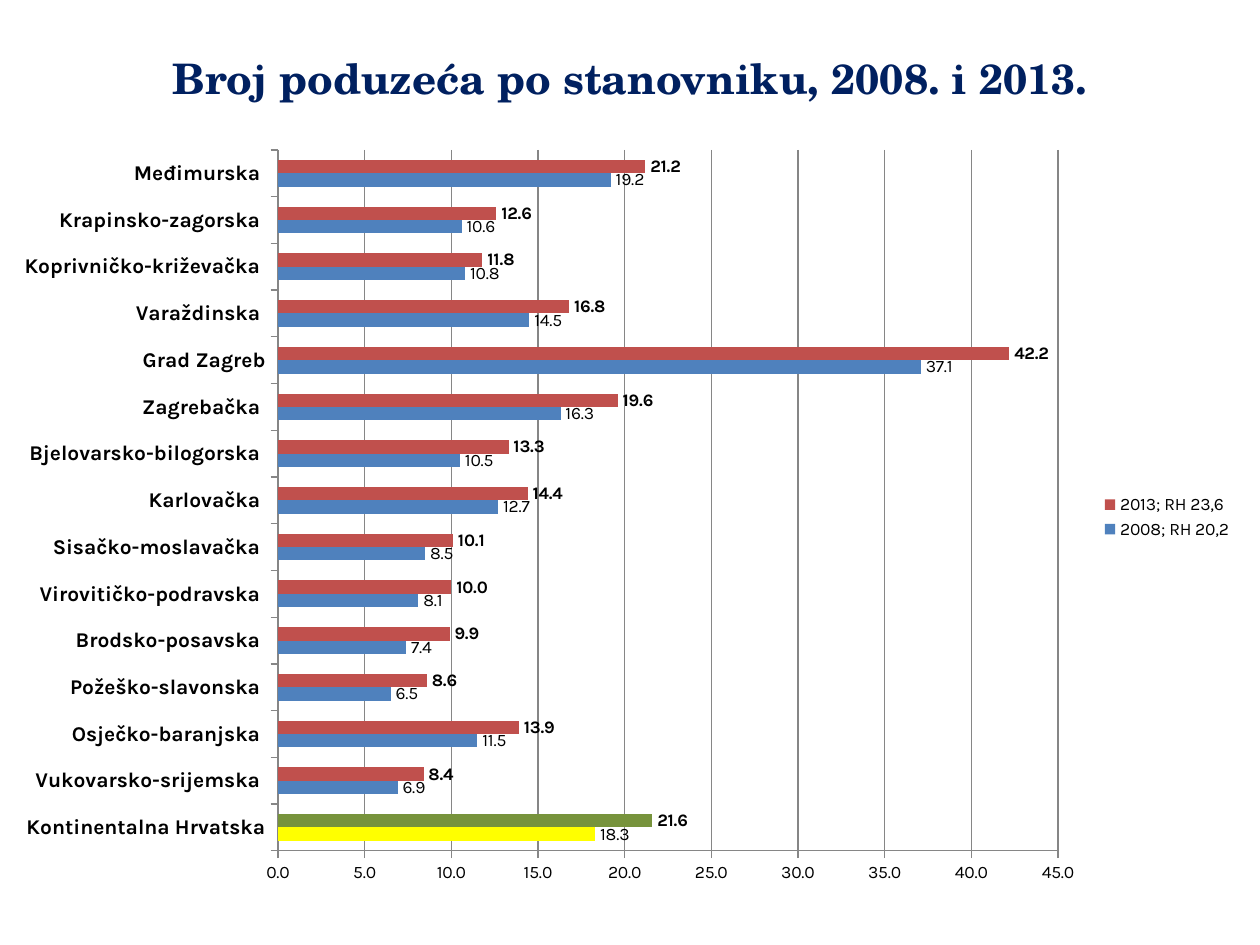
from dataclasses import dataclass

from lxml.etree import SubElement
from pptx import Presentation
from pptx.chart.data import CategoryChartData
from pptx.dml.color import RGBColor
from pptx.enum.chart import XL_CHART_TYPE as ChartType
from pptx.enum.chart import XL_LABEL_POSITION as LabelPosition
from pptx.enum.chart import XL_LEGEND_POSITION as LegendPosition
from pptx.enum.chart import XL_TICK_MARK as TickMark
from pptx.enum.text import MSO_ANCHOR as Anchor
from pptx.enum.text import PP_ALIGN as Align
from pptx.oxml.ns import qn
from pptx.util import Emu, Pt

EMU_PER_PX = 914400 / 126
COLORS = {
    "background": "FFFFFF",
    "title": "002060",
    "text": "000000",
    "axis": "868686",
    "blue": "4F81BD",
    "red": "C0504D",
    "yellow": "FFFF00",
    "green": "77933C",
}
TITLE_FONT = "TeX Gyre Schola"
CHART_FONT = "Karla"
COUNTIES = [
    "Kontinentalna Hrvatska", "Vukovarsko-srijemska ", "Osječko-baranjska ",
    "Požeško-slavonska ", "Brodsko-posavska ", "Virovitičko-podravska ",
    "Sisačko-moslavačka ", "Karlovačka ", "Bjelovarsko-bilogorska ",
    "Zagrebačka ", "Grad Zagreb", "Varaždinska ", "Koprivničko-križevačka ",
    "Krapinsko-zagorska ", "Međimurska ",
]


@dataclass(frozen=True)
class Box:
    left: int
    top: int
    width: int
    height: int

    def emu(self) -> list[Emu]:
        lengths = (self.left, self.top, self.width, self.height)
        return [px(length) for length in lengths]


@dataclass(frozen=True)
class YearSeries:
    name: str
    values: tuple[float, ...]
    color: str
    total_color: str
    bold_labels: bool


YEARS = [
    YearSeries(
        "2008; RH 20,2",
        (18.3, 6.9, 11.5, 6.5, 7.4, 8.1, 8.5, 12.7, 10.5, 16.3, 37.1, 14.5, 10.8, 10.6, 19.2),
        "blue", "yellow", False,
    ),
    YearSeries(
        "2013; RH 23,6",
        (21.6, 8.4, 13.9, 8.6, 9.9, 10, 10.1, 14.4, 13.3, 19.6, 42.2, 16.8, 11.8, 12.6, 21.2),
        "red", "green", True,
    ),
]
TITLE_BOX = Box(0, 0, 1260, 155)
CHART_BOX = Box(0, 135, 1245, 764)
PLOT_BOX = Box(278, 15, 780, 701)


def px(length: int) -> Emu:
    return Emu(round(length * EMU_PER_PX))


def rgb(name: str) -> RGBColor:
    return RGBColor.from_string(COLORS[name])


def set_fill(fill, color: str) -> None:
    fill.solid()
    fill.fore_color.rgb = rgb(color)


def set_font(font, name: str, size: int, color: str, bold: bool) -> None:
    font.name = name
    font.size = Pt(size)
    font.bold = bold
    font.color.rgb = rgb(color)


def set_line(line) -> None:
    line.color.rgb = rgb("axis")
    line.width = Pt(0.75)


def place_plot(chart, plot: Box, frame: Box) -> None:
    plot_area = chart._chartSpace.find(".//" + qn("c:plotArea"))
    for old_layout in plot_area.findall(qn("c:layout")):
        plot_area.remove(old_layout)
    layout = SubElement(plot_area, qn("c:layout"))
    plot_area.insert(0, layout)
    manual = SubElement(layout, qn("c:manualLayout"))
    settings = {
        "layoutTarget": "inner",
        "xMode": "edge",
        "yMode": "edge",
        "x": plot.left / frame.width,
        "y": plot.top / frame.height,
        "w": plot.width / frame.width,
        "h": plot.height / frame.height,
    }
    for tag, value in settings.items():
        SubElement(manual, qn(f"c:{tag}")).set("val", str(value))


def style_series(series, year: YearSeries) -> None:
    series.invert_if_negative = False
    set_fill(series.format.fill, year.color)
    set_fill(series.points[0].format.fill, year.total_color)
    labels = series.data_labels
    labels.show_value = True
    labels.number_format = "0.0"
    labels.number_format_is_linked = False
    labels.position = LabelPosition.OUTSIDE_END
    set_font(labels.font, CHART_FONT, 10, "text", year.bold_labels)


def add_title(slide, box: Box, text: str) -> None:
    shape = slide.shapes.add_textbox(*box.emu())
    set_fill(shape.fill, "background")
    text_frame = shape.text_frame
    text_frame.word_wrap = True
    text_frame.vertical_anchor = Anchor.MIDDLE
    text_frame.text = text
    paragraph = text_frame.paragraphs[0]
    paragraph.alignment = Align.CENTER
    set_font(paragraph.runs[0].font, TITLE_FONT, 24, "title", True)


def add_county_chart(slide, box: Box, years: list[YearSeries]) -> None:
    data = CategoryChartData(number_format="0.0")
    data.categories = COUNTIES
    for year in years:
        data.add_series(year.name, year.values)
    chart = slide.shapes.add_chart(ChartType.BAR_CLUSTERED, *box.emu(), data).chart
    chart.has_title = False
    set_font(chart.font, CHART_FONT, 10, "text", False)

    plot = chart.plots[0]
    plot.gap_width = 150
    plot.overlap = 0
    plot.vary_by_categories = False
    for series, year in zip(plot.series, years):
        style_series(series, year)

    for axis, size, bold in ((chart.category_axis, 12, True), (chart.value_axis, 10, False)):
        axis.major_tick_mark = TickMark.OUTSIDE
        axis.minor_tick_mark = TickMark.NONE
        set_line(axis.format.line)
        set_font(axis.tick_labels.font, CHART_FONT, size, "text", bold)
    chart.category_axis.has_major_gridlines = False
    value_axis = chart.value_axis
    value_axis.minimum_scale = 0
    value_axis.maximum_scale = 45
    value_axis.major_unit = 5
    value_axis.has_major_gridlines = True
    set_line(value_axis.major_gridlines.format.line)
    value_axis.tick_labels.number_format = "0.0"
    value_axis.tick_labels.number_format_is_linked = False

    chart.has_legend = True
    chart.legend.position = LegendPosition.RIGHT
    chart.legend.include_in_layout = False
    set_font(chart.legend.font, CHART_FONT, 10, "text", False)
    place_plot(chart, PLOT_BOX, box)


def main() -> None:
    presentation = Presentation()
    presentation.slide_width = px(1260)
    presentation.slide_height = px(945)
    slide = presentation.slides.add_slide(presentation.slide_layouts[6])
    set_fill(slide.background.fill, "background")
    add_title(slide, TITLE_BOX, "Broj poduzeća po stanovniku, 2008. i 2013.")
    add_county_chart(slide, CHART_BOX, YEARS)
    presentation.save("out.pptx")


if __name__ == "__main__":
    main()
